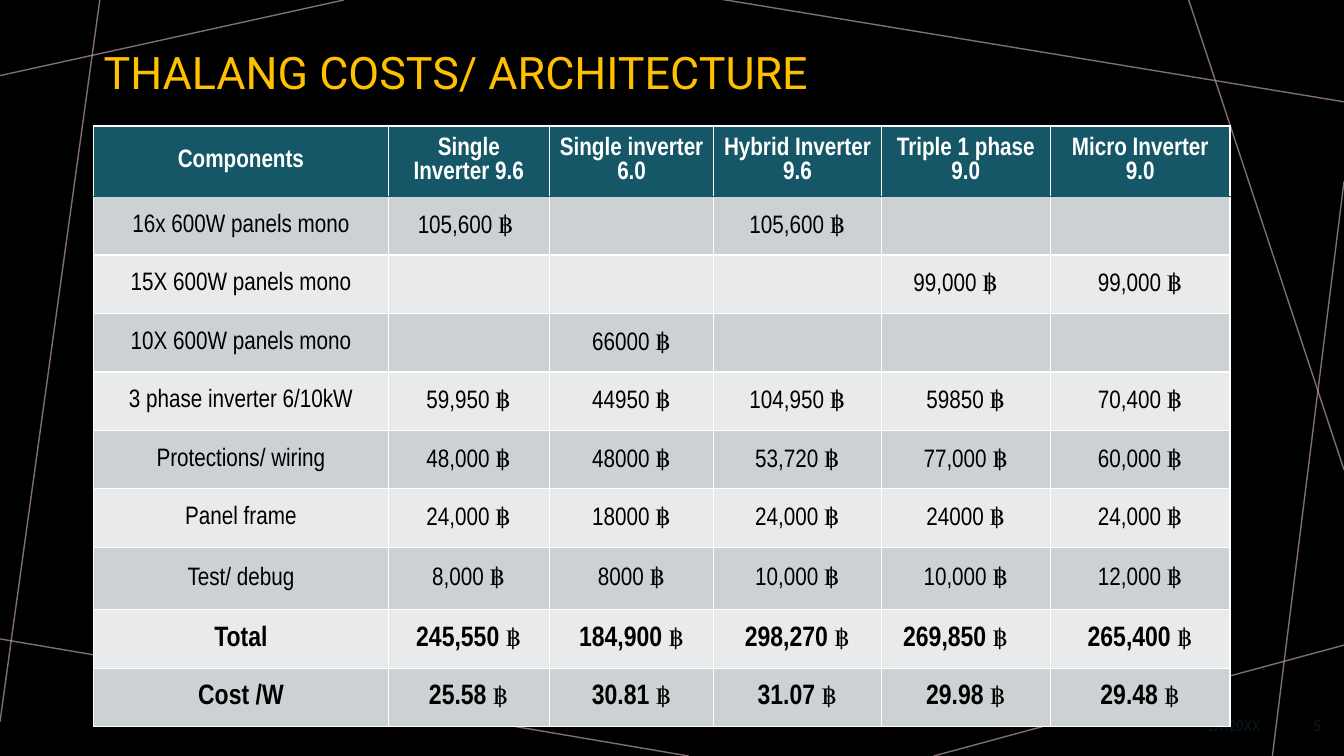
import pptx
import pptx.util
import pptx.dml.color
import pptx.enum.shapes
import pptx.enum.text
import pptx.oxml

Inches, Pt = pptx.util.Inches, pptx.util.Pt
ALIGN = pptx.enum.text.PP_ALIGN
MIDDLE = pptx.enum.text.MSO_ANCHOR.MIDDLE

COLORS = {"back": "000000", "line": "BA9CA0", "title": "FFC000", "head": "155767",
          "dark": "CCD1D3", "light": "E8EAEB", "edge": "FFFFFF", "text": "000000",
          "foot": "0A1C24"}
TITLE = "THALANG COSTS/ ARCHITECTURE"
SIGN = "฿"
HEADS = ["Components", "Single Inverter 9.6", "Single inverter 6.0",
         "Hybrid Inverter 9.6", "Triple 1 phase 9.0", "Micro Inverter 9.0"]
COSTS = [
    ("16x 600W panels mono", "105,600", "", "105,600", "", ""),
    ("15X 600W panels mono", "", "", "", "99,000", "99,000"),
    ("10X 600W panels mono", "", "66000", "", "", ""),
    ("3 phase inverter 6/10kW", "59,950", "44950", "104,950", "59850", "70,400"),
    ("Protections/ wiring", "48,000", "48000", "53,720", "77,000", "60,000"),
    ("Panel frame", "24,000", "18000", "24,000", "24000", "24,000"),
    ("Test/ debug", "8,000", "8000", "10,000", "10,000", "12,000"),
]
SUMS = [
    ("Total", "245,550", "184,900", "298,270", "269,850", "265,400"),
    ("Cost /W", "25.58", "30.81", "31.07", "29.98", "29.48"),
]
WIDTHS = [2.92, 1.6, 1.63, 1.66, 1.68, 1.78]
HEIGHTS = [0.58] * 7 + [0.62] + [0.58] * 2
SHIFTS = {(1, 1): 0.16, (2, 4): 0.3, (8, 4): 0.3}  # right margins of off-centre cells
LINES = [  # x1, y1, x2, y2
    (3.41, 0, 0, 0.75), (0.99, 0, 0, 7.16), (6.83, 7.5, -0.05, 6.33),
    (13.33, 6.4, 9.26, 7.5), (13.33, 1.8, 12.62, 7.5),
    (13.33, 4.66, 11.79, 0), (13.33, 1.01, 7.14, -0.01),
]
FOOTS = [("2/7/20XX", 11.5, 1.1), ("5", 12.7, 0.5)]  # text, left, width
NS = 'xmlns:a="http://schemas.openxmlformats.org/drawingml/2006/main"'


def rgb(name):
    return pptx.dml.color.RGBColor.from_string(COLORS[name])


def add_run(para, text, color, **form):
    run = para.add_run()
    run.text = text
    run.font.color.rgb = rgb(color)
    for key, value in form.items():
        setattr(run.font, key, value)


def add_label(slide, text, box, color, align, **form):
    frame = slide.shapes.add_textbox(*map(Inches, box)).text_frame
    frame.word_wrap = True
    frame.vertical_anchor = MIDDLE
    para = frame.paragraphs[0]
    para.alignment = align
    add_run(para, text, color, **form)
    return para


def add_line(slide, ends):
    line = slide.shapes.add_connector(
        pptx.enum.shapes.MSO_CONNECTOR.STRAIGHT, *map(Inches, ends))
    line.line.width = Pt(1)
    line.line.color.rgb = rgb("line")
    props = line.element.spPr
    tint = props.find(".//" + pptx.oxml.ns.qn("a:srgbClr"))
    tint.append(pptx.oxml.parse_xml(f'<a:alpha {NS} val="70000"/>'))
    props.append(pptx.oxml.parse_xml(f"<a:effectLst {NS}/>"))


def set_edges(cell, row):
    """Draw white cell borders, with a thin dark one under the header row."""
    props = cell._tc.get_or_add_tcPr()
    for spot, side in enumerate("LRTB"):
        seam = (row, side) in ((0, "B"), (1, "T"))
        name, width = ("head", 0.75) if seam else ("edge", 1)
        props.insert(spot, pptx.oxml.parse_xml(
            f'<a:ln{side} {NS} w="{Pt(width)}"><a:solidFill>'
            f'<a:srgbClr val="{COLORS[name]}"/></a:solidFill></a:ln{side}>'))


def fill_cell(cell, text, row, col):
    cell.vertical_anchor = MIDDLE
    cell.fill.solid()
    cell.fill.fore_color.rgb = rgb("head" if row == 0 else "dark" if row % 2 else "light")
    set_edges(cell, row)
    if (row, col) in SHIFTS:
        cell.margin_right = Inches(SHIFTS[row, col])
    para = cell.text_frame.paragraphs[0]
    para.alignment = ALIGN.CENTER
    total = row > len(COSTS)
    plain = {"name": "Arial Narrow", "size": Pt(18), "bold": False}
    main = {**plain, "size": Pt(20 if total else 18), "bold": total or row == 0}
    if not text:
        para.font.size = Pt(18)
    elif row == 0 or col == 0:
        add_run(para, text, "text" if row else "edge", **main)
    else:
        add_run(para, text + " ", "text", **main)
        add_run(para, SIGN, "text", **plain)


def add_costs(slide):
    rows = [HEADS, *COSTS, *SUMS]
    box = map(Inches, (0.93, 1.25, sum(WIDTHS), sum(HEIGHTS)))
    table = slide.shapes.add_table(len(rows), len(HEADS), *box).table
    for col, width in zip(table.columns, WIDTHS):
        col.width = Inches(width)
    for row, height in zip(table.rows, HEIGHTS):
        row.height = Inches(height)
    for r, row in enumerate(rows):
        for c, text in enumerate(row):
            fill_cell(table.cell(r, c), text, r, c)


def main():
    deck = pptx.Presentation()
    deck.slide_width, deck.slide_height = Inches(13.33), Inches(7.5)
    slide = deck.slides.add_slide(deck.slide_layouts[6])
    slide.background.fill.solid()
    slide.background.fill.fore_color.rgb = rgb("back")
    for ends in LINES:
        add_line(slide, ends)
    title = add_label(slide, TITLE, (0.93, 0.24, 11.03, 1.01), "title", ALIGN.LEFT,
                      name="Roboto", size=Pt(32))
    title.line_spacing = 0.9
    for text, left, width in FOOTS:
        add_label(slide, text, (left, 7.05, width, 0.3), "foot", ALIGN.RIGHT,
                  name="Arial Narrow", size=Pt(11))
    add_costs(slide)
    deck.save("out.pptx")


if __name__ == "__main__":
    main()
